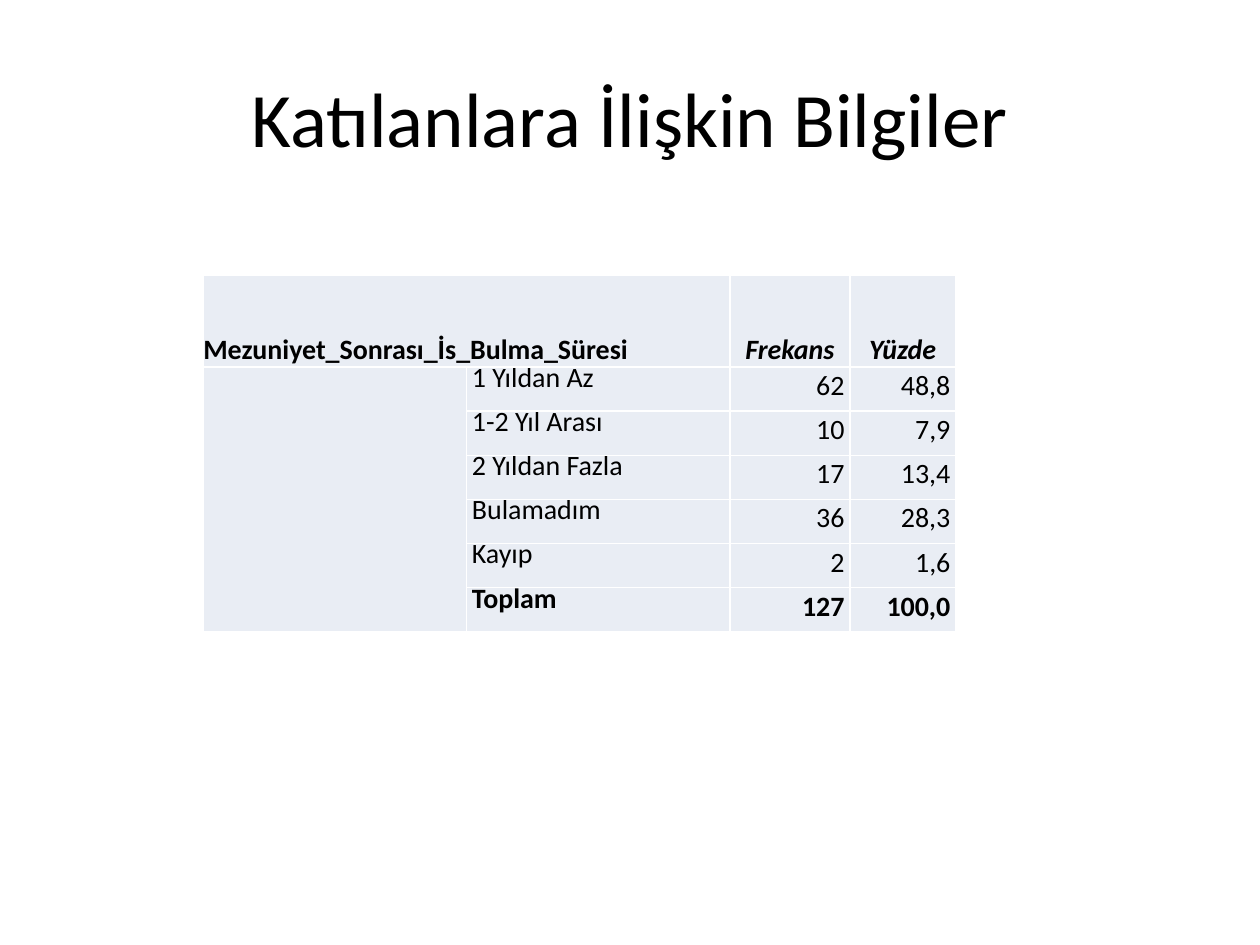
"""Builds a slide with a frequency table on time to find a job after graduation."""
from dataclasses import dataclass

from lxml.etree import SubElement
from pptx import Presentation
from pptx.dml.color import RGBColor
from pptx.enum.text import MSO_ANCHOR as Anchor, PP_ALIGN as Align
from pptx.oxml.ns import qn
from pptx.slide import Slide
from pptx.util import Pt

BLACK = RGBColor(0, 0, 0)
WHITE = RGBColor(255, 255, 255)
PALE_BLUE = RGBColor(0xE9, 0xED, 0xF4)

HEADER = ("Mezuniyet_Sonrası_İs_Bulma_Süresi", "", "Frekans", "Yüzde")
ROWS = (
    ("1 Yıldan Az", "62", "48,8"),
    ("1-2 Yıl Arası", "10", "7,9"),
    ("2 Yıldan Fazla", "17", "13,4"),
    ("Bulamadım", "36", "28,3"),
    ("Kayıp", "2", "1,6"),
    ("Toplam", "127", "100,0"),
)
COLUMN_WIDTHS = (150.5, 150.5, 68.4, 60.5)
HEADER_HEIGHT, ROW_HEIGHT = 52.8, 25.2


@dataclass
class SlideBuilder:
    slide: Slide
    font_name: str = "Calibri"
    title_size: int = 44
    body_size: int = 16
    indent: int = 3

    def set_font(self, paragraph, size, bold=False, italic=False):
        font = paragraph.font
        font.name, font.size = self.font_name, Pt(size)
        font.bold, font.italic = bold, italic
        font.color.rgb = BLACK

    def add_title(self, text, left, top, width, height):
        title = self.slide.shapes.title
        title.left, title.top = Pt(left), Pt(top)
        title.width, title.height = Pt(width), Pt(height)
        frame = title.text_frame
        frame.text, frame.vertical_anchor = text, Anchor.MIDDLE
        paragraph = frame.paragraphs[0]
        paragraph.alignment = Align.CENTER
        self.set_font(paragraph, self.title_size)

    def add_borders(self, cell):
        properties = cell._tc.get_or_add_tcPr()
        for side in ("lnL", "lnR", "lnT", "lnB"):
            line = SubElement(properties, qn(f"a:{side}"), w=str(Pt(1)))
            fill = SubElement(line, qn("a:solidFill"))
            SubElement(fill, qn("a:srgbClr"), val=str(WHITE))

    def fill_cell(self, cell, text, align, anchor, bold, italic, indented):
        self.add_borders(cell)
        cell.fill.solid()
        cell.fill.fore_color.rgb = PALE_BLUE
        cell.margin_left = cell.margin_right = cell.margin_top = cell.margin_bottom = 0
        cell.vertical_anchor = anchor
        cell.text = text
        paragraph = cell.text_frame.paragraphs[0]
        paragraph.alignment = align
        paragraph.line_spacing = Pt(16) if indented else 1.15
        self.set_font(paragraph, self.body_size, bold, italic)
        if indented:
            properties = paragraph._p.get_or_add_pPr()
            for side in ("marL", "marR"):
                properties.set(side, str(Pt(self.indent)))

    def add_table(self, left, top):
        records = [HEADER] + [("", *row) for row in ROWS]
        heights = [HEADER_HEIGHT] + [ROW_HEIGHT] * len(ROWS)
        table = self.slide.shapes.add_table(
            len(records), len(HEADER), Pt(left), Pt(top),
            Pt(sum(COLUMN_WIDTHS)), Pt(sum(heights))).table
        for column, width in zip(table.columns, COLUMN_WIDTHS):
            column.width = Pt(width)
        for row, height in zip(table.rows, heights):
            row.height = Pt(height)
        last = len(ROWS)
        for i, record in enumerate(records):
            for j, text in enumerate(record):
                is_header, is_number = i == 0, j > 1
                align = Align.LEFT
                if is_number:
                    align = Align.CENTER if is_header else Align.RIGHT
                anchor = Anchor.MIDDLE if is_number else Anchor.TOP
                self.fill_cell(
                    table.cell(i, j), text, align,
                    Anchor.BOTTOM if is_header else anchor,
                    bold=i in (0, last), italic=is_header and is_number,
                    indented=not is_header or is_number)
        table.cell(0, 0).merge(table.cell(0, 1))
        table.cell(1, 0).merge(table.cell(last, 0))


def main():
    presentation = Presentation()
    presentation.slide_width, presentation.slide_height = Pt(720), Pt(540)
    slide = presentation.slides.add_slide(presentation.slide_layouts[5])
    builder = SlideBuilder(slide)
    builder.add_title("Katılanlara İlişkin Bilgiler", 36, 21.6, 648, 90)
    builder.add_table(116.2, 157)
    presentation.save("out.pptx")


if __name__ == "__main__":
    main()
